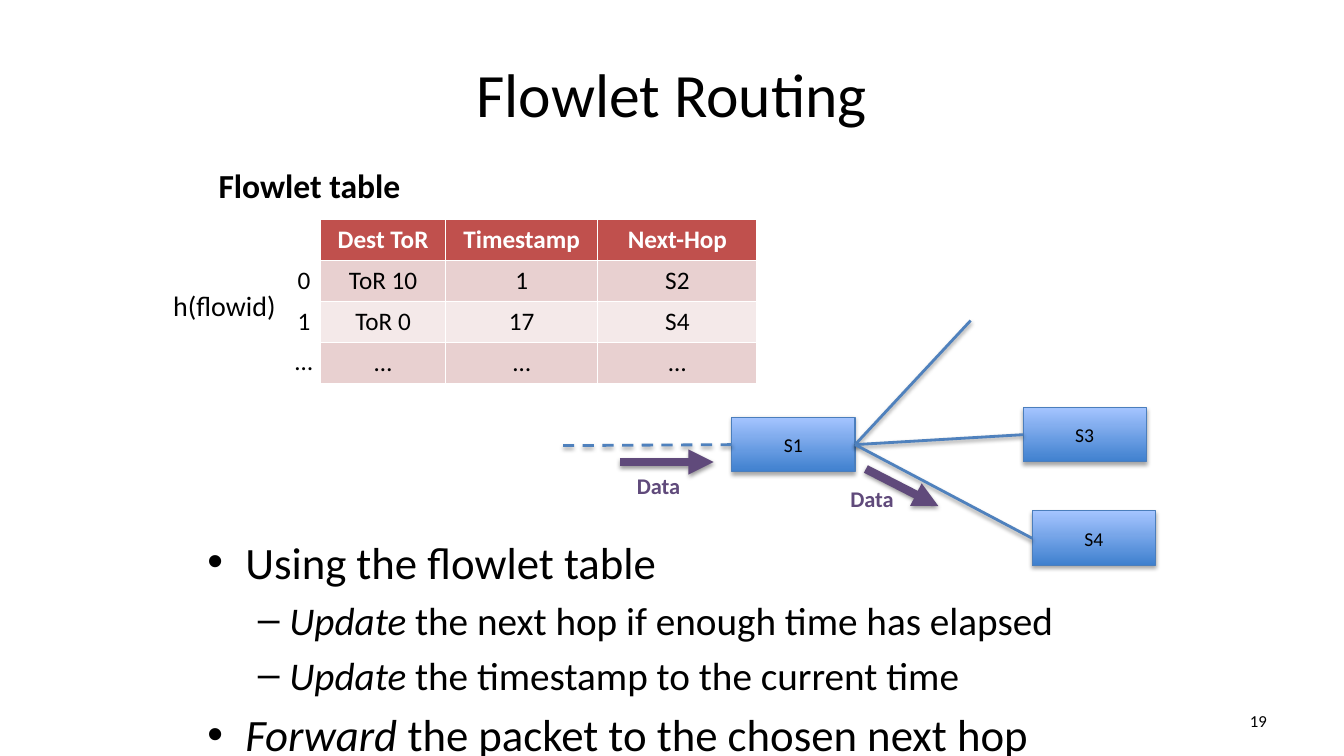
from lxml.etree import SubElement
from pptx import Presentation
from pptx.dml.color import RGBColor
from pptx.enum.dml import MSO_LINE as Dash
from pptx.enum.shapes import MSO_CONNECTOR as Conn, MSO_SHAPE as Form
from pptx.enum.text import MSO_ANCHOR as Anchor, MSO_AUTO_SIZE as Fit, PP_ALIGN as Align
from pptx.oxml.ns import qn
from pptx.util import Pt

HUES = {
    "text": "000000", "white": "FFFFFF", "head": "C0504D",
    "odd": "E8D0D0", "even": "F4E9E9", "link": "4F81BD",
    "edge": "4B7EBC", "low": "3F80CE", "high": "A4C4FF", "data": "604A7B",
}
LEFT, TOP, BOTTOM, RIGHT = 1, 0, 2, 3


def hue(name):
    """Return a named colour."""
    return RGBColor.from_string(HUES[name])


def style(para, size, color="text", bold=False, align=None):
    """Set the font and alignment of a paragraph."""
    font = para.font
    font.name, font.size, font.bold = "Calibri", Pt(size), bold
    font.color.rgb = hue(color)
    if align is not None:
        para.alignment = align


def place(shape, box):
    """Move a shape to a box given in points."""
    shape.left, shape.top, shape.width, shape.height = map(Pt, box)


def label(slide, box, text, size, color="text", bold=False, align=Align.LEFT):
    """Add one line of text."""
    frame = slide.shapes.add_textbox(*map(Pt, box)).text_frame
    frame.word_wrap = False
    frame.text = text
    style(frame.paragraphs[0], size, color, bold, align)
    return frame


def shade(shape, blur, dist, alpha):
    """Give a shape a soft shadow below it."""
    props = shape._element.spPr
    for old in props.findall(qn("a:effectLst")):
        props.remove(old)
    cast = SubElement(SubElement(props, qn("a:effectLst")), qn("a:outerShdw"),
                      blurRad=str(Pt(blur)), dist=str(Pt(dist)),
                      dir="5400000", rotWithShape="0")
    tint = SubElement(cast, qn("a:srgbClr"), val=HUES["text"])
    SubElement(tint, qn("a:alpha"), val=str(alpha * 1000))


def wire(slide, start, end, color="link", width=2, dash=None, arrow=False):
    """Draw a line between two points."""
    line = slide.shapes.add_connector(Conn.STRAIGHT, *map(Pt, start + end))
    line.line.color.rgb = hue(color)
    line.line.width = Pt(width)
    if dash:
        line.line.dash_style = dash
    if arrow:
        SubElement(line.line._get_or_add_ln(), qn("a:tailEnd"), type="triangle")
    shade(line, 3.1, 1.6, 38)
    return line


def node(slide, x, y, name):
    """Draw a switch with its name."""
    shape = slide.shapes.add_shape(Form.RECTANGLE, *map(Pt, (x, y, 88, 39)))
    shape.shadow.inherit = False
    shape.fill.gradient()
    shape.fill.gradient_angle = 90
    for stop, color in zip(shape.fill.gradient_stops, ("low", "high")):
        stop.color.rgb = hue(color)
    shape.line.color.rgb = hue("edge")
    shape.line.width = Pt(0.75)
    shade(shape, 3.1, 1.8, 35)
    frame = shape.text_frame
    frame.margin_left = frame.margin_right = 0
    frame.vertical_anchor = Anchor.MIDDLE
    frame.text = name
    style(frame.paragraphs[0], 14, align=Align.CENTER)
    return shape


def header(slide, box):
    """Fill the title."""
    title = slide.shapes.title
    place(title, box)
    title.text_frame.text = "Flowlet Routing"
    title.text_frame.vertical_anchor = Anchor.MIDDLE
    style(title.text_frame.paragraphs[0], 44, align=Align.CENTER)


def points(slide, box):
    """Fill the bullet list."""
    body = slide.placeholders[1]
    place(body, box)
    frame = body.text_frame
    frame.auto_size = Fit.NONE
    items = [
        (0, "", "Using the flowlet table"),
        (1, "Update ", "the next hop if enough time has elapsed"),
        (1, "Update ", "the timestamp to the current time"),
        (0, "Forward ", "the packet to the chosen next hop"),
    ]
    for i, (level, verb, rest) in enumerate(items):
        para = frame.add_paragraph() if i else frame.paragraphs[0]
        para.level = level
        style(para, 28 if level else 32)
        if verb:
            run = para.add_run()
            run.text, run.font.italic = verb, True
        para.add_run().text = rest


def lookup(slide, box):
    """Draw the flowlet table with its caption and row labels."""
    x, y, width, height = box
    rows = [
        ("Dest ToR", "Timestamp", "Next-Hop"),
        ("ToR 10", "1", "S2"),
        ("ToR 0", "17", "S4"),
        ("…", "…", "…"),
    ]
    step = height / len(rows)
    table = slide.shapes.add_table(len(rows), 3, *map(Pt, box)).table
    for col, size in zip(table.columns, (89.3, 108.7, width - 198)):
        col.width = Pt(size)
    for r, row in enumerate(rows):
        table.rows[r].height = Pt(step)
        fill = "head" if r == 0 else "odd" if r % 2 else "even"
        for c, text in enumerate(row):
            cell = table.cell(r, c)
            cell.fill.solid()
            cell.fill.fore_color.rgb = hue(fill)
            cell.text = text
            style(cell.text_frame.paragraphs[0], 18,
                  "text" if r else "white", r == 0, Align.CENTER)
    label(slide, (x - 80, y - 42.5, 146, 36), "Flowlet table", 24, bold=True)
    label(slide, (x - 112.4, y + 45.3, 88.6, 31.5), "h(flowid)", 20)
    for i, text in enumerate(("0", "1", "…")):
        label(slide, (x - 25.2, y + 28 + i * step, 26.6, 29), text, 18,
              align=Align.CENTER)


def network(slide, box):
    """Draw the switches, their links and the data flow."""
    x, y, width, height = box
    hub = node(slide, x + 120.5, y + 69.1, "S1")
    peers = [node(slide, x + 328.5, y + 62, "S3"),
             node(slide, x + width - 88, y + height - 39, "S4")]
    port = (x + 208.5, y + 88.6)
    wire(slide, (x + 291, y), port).end_connect(hub, RIGHT)
    for peer in peers:
        line = wire(slide, port, port)
        line.begin_connect(peer, LEFT)
        line.end_connect(hub, RIGHT)
    wire(slide, (x + 120.5, y + 88.6), (x, y + 89.3), dash=Dash.DASH)
    flows = [((40.5, 101), (107.5, 101), (45.5, 104.5)),
             ((216.2, 106), (268, 132.5), (198, 113.8))]
    for start, end, spot in flows:
        wire(slide, (x + start[0], y + start[1]), (x + end[0], y + end[1]),
             "data", 6, arrow=True)
        label(slide, (x + spot[0], y + spot[1], 56, 26.6), "Data", 16, "data", True)


def main():
    """Build and save the slide."""
    deck = Presentation()
    deck.slide_width, deck.slide_height = Pt(960), Pt(540)
    slide = deck.slides.add_slide(deck.slide_layouts[1])
    header(slide, (48, 21.6, 864, 90))
    network(slide, (402.3, 229, 423, 175))
    points(slide, (141, 378, 699, 162))
    lookup(slide, (229, 157, 311.8, 116.8))
    page = label(slide, (688, 500.5, 224, 28.8), "19", 12, align=Align.RIGHT)
    page.word_wrap = True
    page.vertical_anchor = Anchor.MIDDLE
    deck.save("out.pptx")


if __name__ == "__main__":
    main()
